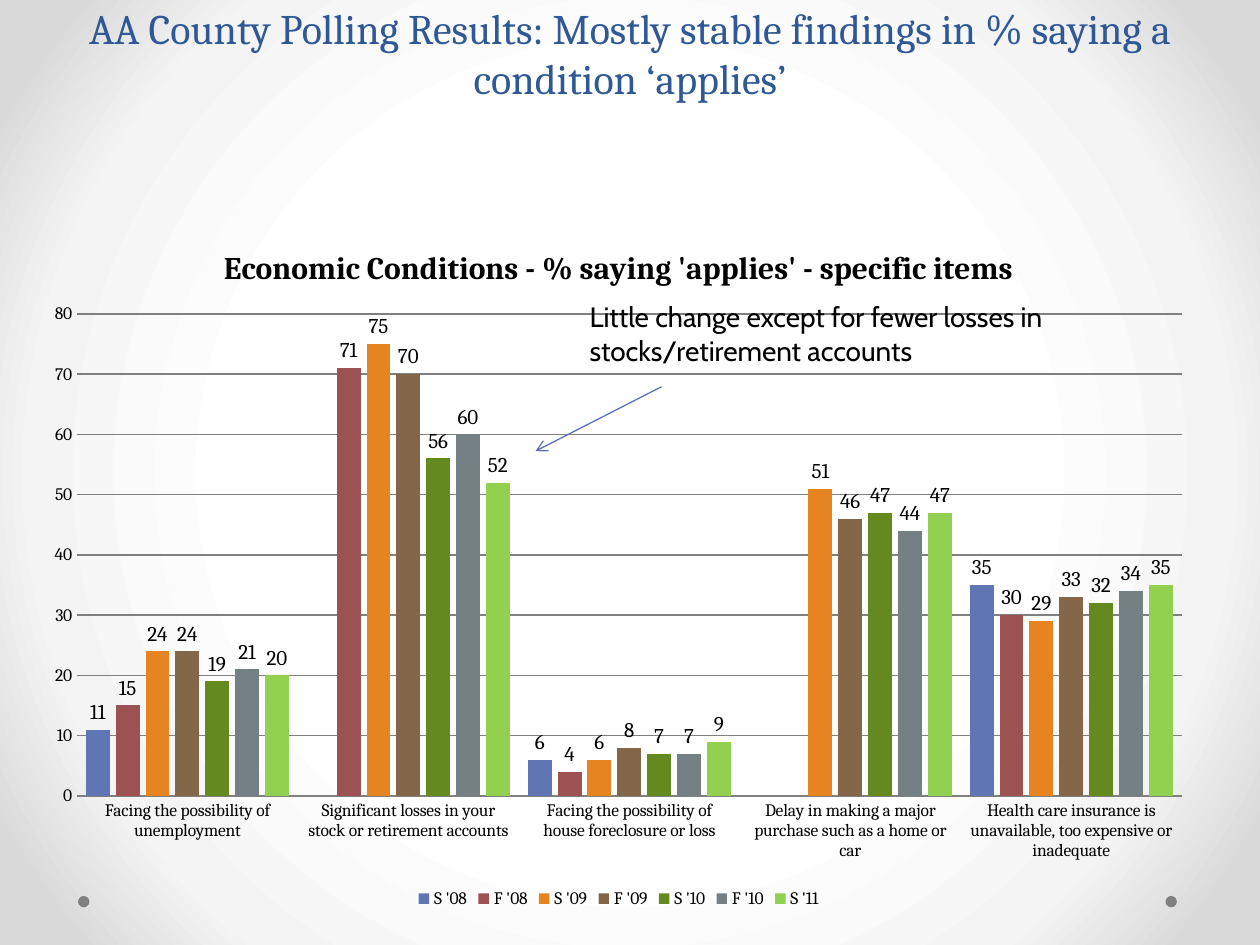
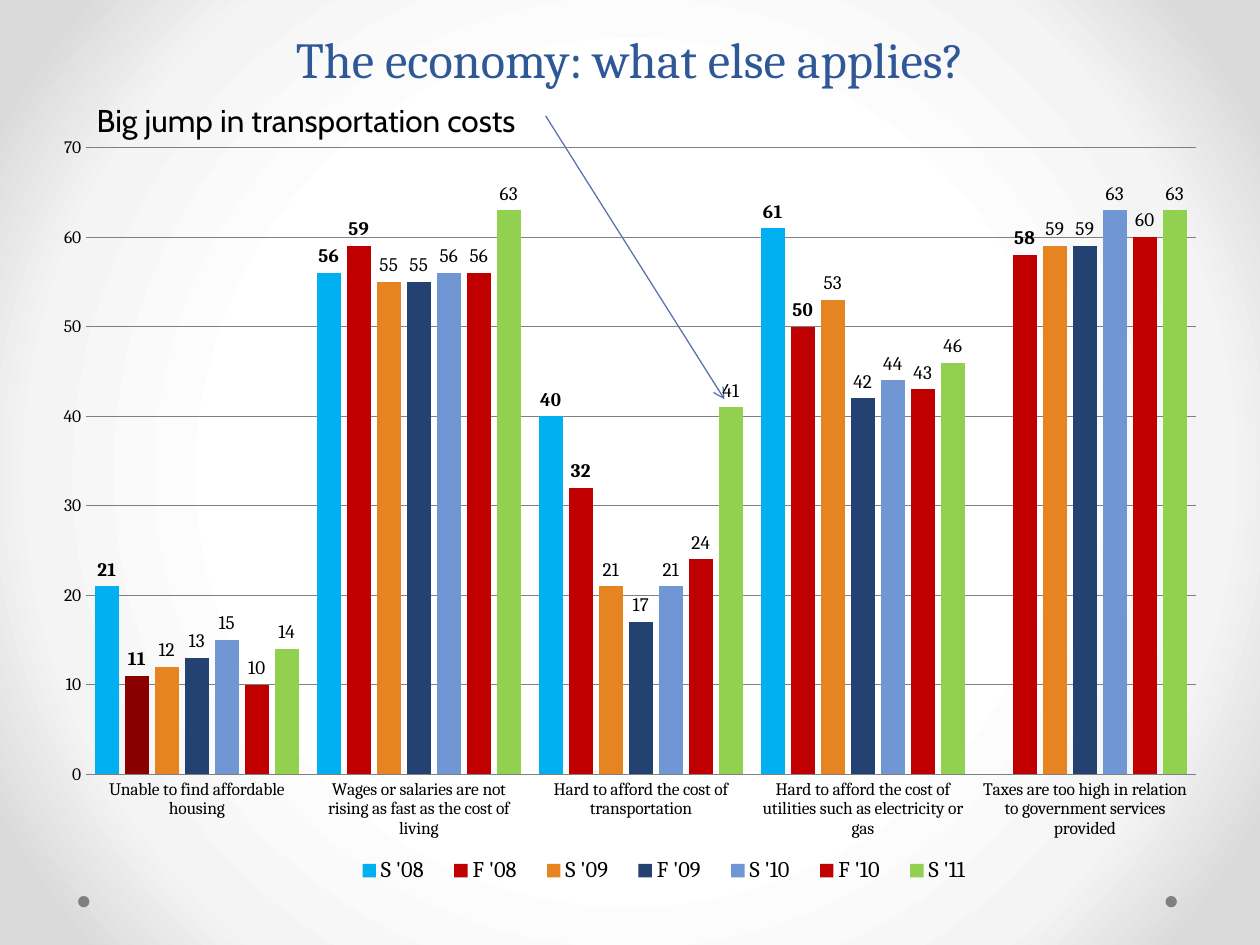
from dataclasses import dataclass, field
from typing import NamedTuple, Optional

from pptx import Presentation, oxml, util as u
from pptx.chart import data as chart_data
from pptx.dml import color
from pptx.enum import chart as chart_enum, shapes, text
from pptx.oxml import ns


@dataclass(frozen=True)
class Theme:
    heading_font: str = "Cambria"
    note_font: str = "Cabin"
    title: str = "2F5897"
    body: str = "000000"
    arrow: str = "5C72B2"
    dot: str = "808080"
    grid: str = "808080"
    background: tuple = ((50, "FFFFFF"), (76, "F4F4F4"), (92, "DADADA"))
    chart_size: float = 10
    chart_title_size: float = 18
    arrow_width: float = 0.75


class Box(NamedTuple):
    left: float
    top: float
    width: float
    height: float


class Series(NamedTuple):
    name: str
    values: tuple
    color: str
    bold: bool = False
    point_colors: dict = {}


class Arrow(NamedTuple):
    start: tuple
    end: tuple
    behind_chart: bool = False


class Note(NamedTuple):
    text: str
    box: Box
    size: float


@dataclass(frozen=True)
class PollChart:
    box: Box
    plot: Box
    axis_maximum: int
    categories: tuple
    series: tuple
    label_size: float
    legend_size: float = 10
    legend: Optional[Box] = None
    title: Optional[str] = None


@dataclass(frozen=True)
class PollSlide:
    title: str
    title_top: float
    title_size: float
    chart: PollChart
    note: Note
    arrow: Arrow
    title_spacing: Optional[float] = None
    dots: tuple = field(default=(Box(666, 512, 6.5, 6.5), Box(44.6, 512, 6.5, 6.5)))


THEME = Theme()

ECONOMIC_CONDITIONS = PollSlide(
    title="AA County Polling Results: Mostly stable findings in % saying a condition ‘applies’",
    title_top=30.2,
    title_size=24,
    chart=PollChart(
        box=Box(18, 126, 671, 396),
        plot=Box(44, 179.4, 631.4, 275.5),
        axis_maximum=80,
        title="Economic Conditions - % saying 'applies' - specific items",
        label_size=12,
        categories=(
            "Facing the possibility of unemployment",
            "Significant losses in your stock or retirement accounts",
            "Facing the possibility of house foreclosure or loss",
            "Delay in making a major purchase such as a home or car",
            "Health care insurance is unavailable, too expensive or inadequate",
        ),
        series=(
            Series("S '08", (11, None, 6, None, 35), "6076B4"),
            Series("F '08", (15, 71, 4, None, 30), "9C5252"),
            Series("S '09", (24, 75, 6, 51, 29), "E68422"),
            Series("F '09", (24, 70, 8, 46, 33), "846648"),
            Series("S '10", (19, 56, 7, 47, 32), "63891F"),
            Series("F '10", (21, 60, 7, 44, 34), "758085"),
            Series("S '11", (20, 52, 9, 47, 35), "92D050"),
        ),
    ),
    note=Note(
        "Little change except for fewer losses in stocks/retirement accounts",
        Box(329.8, 167.8, 293.8, 46),
        16,
    ),
    arrow=Arrow((378, 221), (306, 257.8)),
)

WHAT_ELSE_APPLIES = PollSlide(
    title="The economy: what else applies?",
    title_top=21.6,
    title_size=28.8,
    title_spacing=58,
    chart=PollChart(
        box=Box(23, 70, 674, 443.5),
        plot=Box(49.1, 84.4, 634.3, 358.2),
        axis_maximum=70,
        label_size=10.9,
        legend_size=12.8,
        legend=Box(194, 489, 371, 17),
        categories=(
            "Unable to find affordable housing",
            "Wages or salaries are not rising as fast as the cost of living",
            "Hard to afford the cost of transportation",
            "Hard to afford the cost of utilities such as electricity or gas",
            "Taxes are too high in relation to government services provided",
        ),
        series=(
            Series("S '08", (21, 56, 40, 61, None), "00B0F0", True),
            Series("F '08", (11, 59, 32, 50, 58), "C00000", True, {0: "8A0000"}),
            Series("S '09", (12, 55, 21, 53, 59), "E68422"),
            Series("F '09", (13, 55, 17, 42, 59), "234271"),
            Series("S '10", (15, 56, 21, 44, 63), "7097D3"),
            Series("F '10", (10, 56, 24, 43, 60), "C00000"),
            Series("S '11", (14, 63, 41, 46, 63), "92D050"),
        ),
    ),
    note=Note("Big jump in transportation costs", Box(48.2, 54, 311.8, 28.8), 18),
    arrow=Arrow((311.8, 66.2), (414, 228.2), behind_chart=True),
)


def points(values) -> list:
    return [u.Pt(value) for value in values]


def paint(fill, hex_color: str) -> None:
    fill.solid()
    fill.fore_color.rgb = color.RGBColor.from_string(hex_color)


def style_font(font, name: str, size: float, hex_color: str, bold: bool = False) -> None:
    font.name = name
    font.size = u.Pt(size)
    font.bold = bold
    font.color.rgb = color.RGBColor.from_string(hex_color)


def style_line(line, hex_color: str, width: float) -> None:
    line.color.rgb = color.RGBColor.from_string(hex_color)
    line.width = u.Pt(width)


def set_background(master) -> None:
    master.background.fill.solid()
    properties = master.element.xpath(".//p:bgPr")[0]
    stops = "".join(
        f'<a:gs pos="{position * 1000}"><a:srgbClr val="{hex_color}"/></a:gs>'
        for position, hex_color in THEME.background
    )
    properties.replace(properties[0], oxml.parse_xml(
        f'<a:gradFill {ns.nsdecls("a")} rotWithShape="1"><a:gsLst>{stops}</a:gsLst>'
        '<a:path path="circle"><a:fillToRect l="50000" t="50000" r="50000" b="50000"/>'
        "</a:path></a:gradFill>"
    ))


def add_dot(slide, box: Box) -> None:
    dot = slide.shapes.add_shape(shapes.MSO_SHAPE.OVAL, *points(box))
    dot.shadow.inherit = False
    paint(dot.fill, THEME.dot)
    dot.line.fill.background()


def set_title(slide, content: PollSlide) -> None:
    title = slide.shapes.title
    title.left, title.top, title.width, title.height = points((36, content.title_top, 648, 32.4))
    frame = title.text_frame
    frame.text = content.title
    frame.word_wrap = True
    frame.auto_size = text.MSO_AUTO_SIZE.NONE
    frame.vertical_anchor = text.MSO_ANCHOR.BOTTOM
    paragraph = frame.paragraphs[0]
    paragraph.alignment = text.PP_ALIGN.CENTER
    if content.title_spacing:
        paragraph.line_spacing = u.Pt(content.title_spacing)
    style_font(paragraph.runs[0].font, THEME.heading_font, content.title_size, THEME.title)


def add_note(slide, note: Note) -> None:
    frame = slide.shapes.add_textbox(*points(note.box)).text_frame
    frame.text = note.text
    frame.word_wrap = True
    frame.auto_size = text.MSO_AUTO_SIZE.SHAPE_TO_FIT_TEXT
    style_font(frame.paragraphs[0].runs[0].font, THEME.note_font, note.size, THEME.body)


def add_arrow(slide, arrow: Arrow) -> None:
    connector = slide.shapes.add_connector(
        shapes.MSO_CONNECTOR.STRAIGHT, *points(arrow.start + arrow.end)
    )
    style_line(connector.line, THEME.arrow, THEME.arrow_width)
    properties = connector.element.spPr
    properties.find(ns.qn("a:ln")).append(
        oxml.parse_xml(f'<a:tailEnd {ns.nsdecls("a")} type="arrow"/>')
    )
    properties.append(oxml.parse_xml(f'<a:effectLst {ns.nsdecls("a")}/>'))


def place_part(element, index: int, part: Box, chart_box: Box, target: str = "") -> None:
    for layout in element.findall(ns.qn("c:layout")):
        element.remove(layout)
    fractions = {
        "x": (part.left - chart_box.left) / chart_box.width,
        "y": (part.top - chart_box.top) / chart_box.height,
        "w": part.width / chart_box.width,
        "h": part.height / chart_box.height,
    }
    modes = '<c:xMode val="edge"/><c:yMode val="edge"/>'
    sizes = "".join(f'<c:{key} val="{value:.4f}"/>' for key, value in fractions.items())
    element.insert(index, oxml.parse_xml(
        f'<c:layout {ns.nsdecls("c")}><c:manualLayout>{target}{modes}{sizes}'
        "</c:manualLayout></c:layout>"
    ))


def clear_chart_fill(chart) -> None:
    chart.element.find(ns.qn("c:chart")).addnext(oxml.parse_xml(
        f'<c:spPr {ns.nsdecls("c", "a")}><a:noFill/><a:ln><a:noFill/></a:ln></c:spPr>'
    ))


def style_axes(chart, maximum: int) -> None:
    for axis in (chart.category_axis, chart.value_axis):
        axis.major_tick_mark = axis.minor_tick_mark = chart_enum.XL_TICK_MARK.NONE
    style_line(chart.category_axis.format.line, THEME.grid, 0.75)
    value_axis = chart.value_axis
    value_axis.minimum_scale, value_axis.maximum_scale, value_axis.major_unit = 0, maximum, 10
    value_axis.has_major_gridlines = True
    style_line(value_axis.major_gridlines.format.line, THEME.grid, 0.75)
    value_axis.format.line.fill.background()


def style_series(plotted, series: Series, label_size: float) -> None:
    plotted.invert_if_negative = False
    paint(plotted.format.fill, series.color)
    for index, hex_color in series.point_colors.items():
        paint(plotted.points[index].format.fill, hex_color)
    labels = plotted.data_labels
    labels.show_value = True
    labels.position = chart_enum.XL_LABEL_POSITION.OUTSIDE_END
    style_font(labels.font, THEME.heading_font, label_size, THEME.body, series.bold)


def add_poll_chart(slide, content: PollChart) -> None:
    data = chart_data.CategoryChartData()
    data.categories = content.categories
    for series in content.series:
        data.add_series(series.name, series.values)
    chart = slide.shapes.add_chart(
        chart_enum.XL_CHART_TYPE.COLUMN_CLUSTERED, *points(content.box), data
    ).chart
    style_font(chart.font, THEME.heading_font, THEME.chart_size, THEME.body)
    chart.has_title = content.title is not None
    if content.title:
        frame = chart.chart_title.text_frame
        frame.text = content.title
        font = frame.paragraphs[0].runs[0].font
        style_font(font, THEME.heading_font, THEME.chart_title_size, THEME.body, True)
    style_axes(chart, content.axis_maximum)
    plot = chart.plots[0]
    plot.gap_width, plot.overlap, plot.vary_by_categories = 75, -25, False
    for plotted, series in zip(plot.series, content.series):
        style_series(plotted, series, content.label_size)
    chart.has_legend = True
    chart.legend.position = chart_enum.XL_LEGEND_POSITION.BOTTOM
    chart.legend.include_in_layout = False
    style_font(chart.legend.font, THEME.heading_font, content.legend_size, THEME.body)
    plot_area = chart.element.xpath(".//c:plotArea")[0]
    place_part(plot_area, 0, content.plot, content.box, '<c:layoutTarget val="inner"/>')
    if content.legend:
        place_part(chart.element.xpath(".//c:legend")[0], 1, content.legend, content.box)
    clear_chart_fill(chart)


def add_poll_slide(presentation, content: PollSlide) -> None:
    slide = presentation.slides.add_slide(presentation.slide_layouts.get_by_name("Title Only"))
    for dot in content.dots:
        add_dot(slide, dot)
    set_title(slide, content)
    if content.arrow.behind_chart:
        add_arrow(slide, content.arrow)
    add_poll_chart(slide, content.chart)
    add_note(slide, content.note)
    if not content.arrow.behind_chart:
        add_arrow(slide, content.arrow)


def main() -> None:
    presentation = Presentation()
    presentation.slide_width, presentation.slide_height = points((720, 540))
    set_background(presentation.slide_master)
    for content in (ECONOMIC_CONDITIONS, WHAT_ELSE_APPLIES):
        add_poll_slide(presentation, content)
    presentation.save("out.pptx")


if __name__ == "__main__":
    main()
